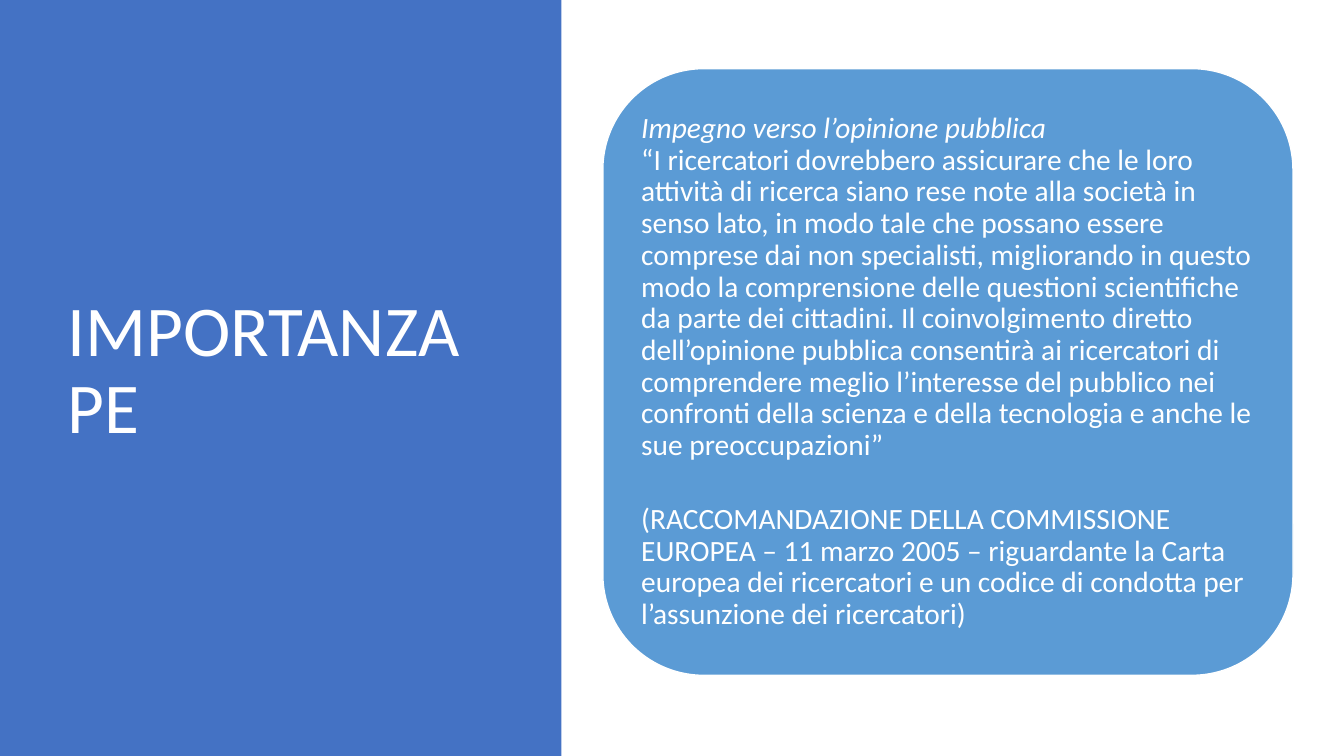
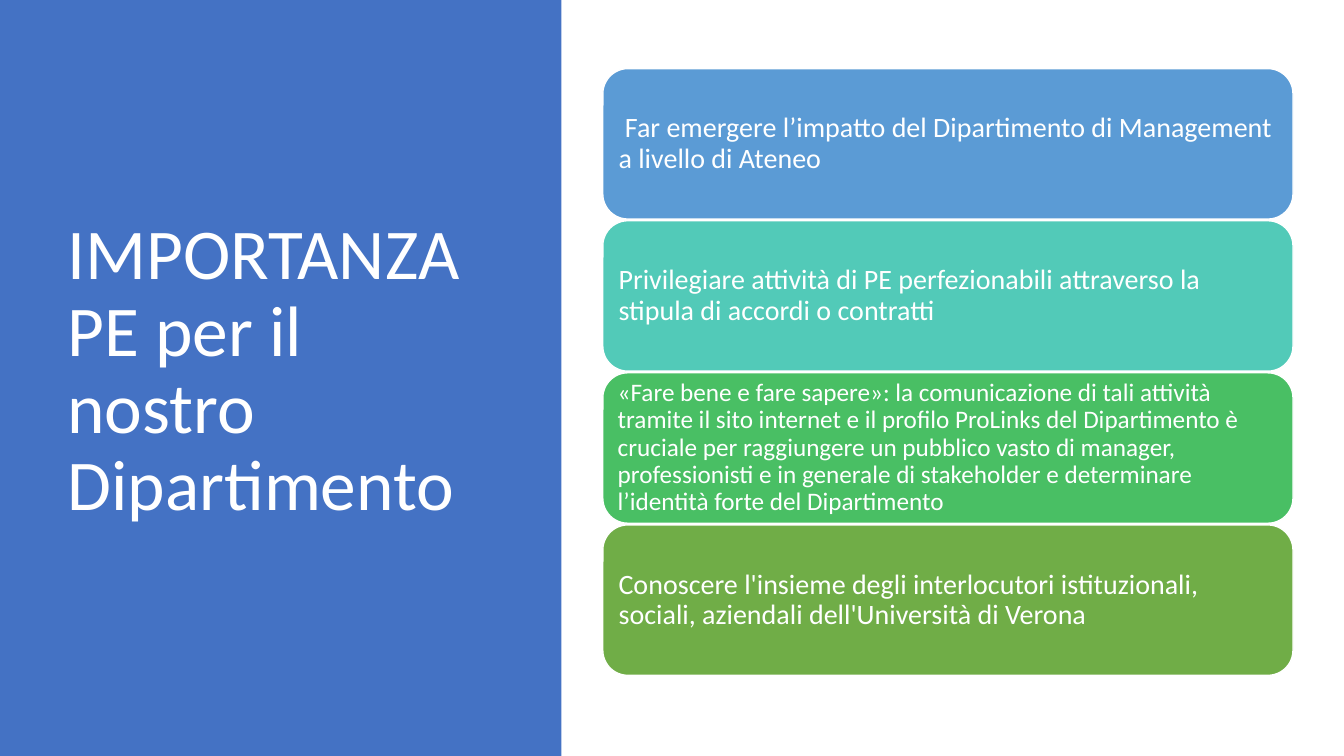
from dataclasses import dataclass

from pptx import Presentation
from pptx.dml.color import RGBColor as Color
from pptx.enum.shapes import MSO_SHAPE as Preset
from pptx.enum.text import MSO_ANCHOR as Anchor, MSO_AUTO_SIZE as AutoSize, PP_ALIGN as Align
from pptx.util import Pt


@dataclass(frozen=True)
class Theme:
    font: str = "Calibri"
    white: str = "FFFFFF"
    panel: str = "4472C4"
    blue: str = "5B9BD5"
    teal: str = "52CAB8"
    green: str = "49BF64"
    olive: str = "70AD47"
    title_size: int = 51
    quote_size: int = 21
    card_size: int = 20
    small_size: int = 18
    line_spacing: float = 0.9
    padding_ratio: float = 0.3


@dataclass(frozen=True)
class Line:
    text: str
    italic: bool = False
    space_before: float = 0


@dataclass(frozen=True)
class Card:
    color: str
    size: int
    lines: tuple


SLIDE_WIDTH, SLIDE_HEIGHT = 960, 540
PANEL_WIDTH = 401
TITLE_LEFT, TITLE_WIDTH = 41, 299.5
CARD_LEFT, CARD_WIDTH, CARD_GAP = 430.6, 493, 1.2
CONTENT_TOP, CONTENT_HEIGHT = 49, 433.4


class Deck:
    def __init__(self, theme):
        self.theme = theme
        self.slide = None
        self.presentation = Presentation()
        self.presentation.slide_width = Pt(SLIDE_WIDTH)
        self.presentation.slide_height = Pt(SLIDE_HEIGHT)

    def new_slide(self, title):
        layout = self.presentation.slide_layouts[5]
        self.slide = self.presentation.slides.add_slide(layout)
        panel = self.box(Preset.RECTANGLE, 0, 0, PANEL_WIDTH, SLIDE_HEIGHT, self.theme.panel)
        panel.line.fill.background()
        self.title(title)

    def title(self, text):
        shape = self.slide.shapes.title
        self.slide.shapes._spTree.append(shape._element)
        shape.left, shape.top = Pt(TITLE_LEFT), Pt(CONTENT_TOP)
        shape.width, shape.height = Pt(TITLE_WIDTH), Pt(CONTENT_HEIGHT)
        self.fill_text(shape.text_frame, [Line(text)], self.theme.title_size)

    def box(self, preset, left, top, width, height, color):
        shape = self.slide.shapes.add_shape(preset, Pt(left), Pt(top), Pt(width), Pt(height))
        shape.shadow.inherit = False
        shape.fill.solid()
        shape.fill.fore_color.rgb = Color.from_string(color)
        return shape

    def fill_text(self, frame, lines, size):
        frame.word_wrap = True
        frame.auto_size = AutoSize.NONE
        frame.vertical_anchor = Anchor.MIDDLE
        for index, line in enumerate(lines):
            paragraph = frame.add_paragraph() if index else frame.paragraphs[0]
            paragraph.alignment = Align.LEFT
            paragraph.line_spacing = self.theme.line_spacing
            paragraph.space_before = Pt(line.space_before)
            run = paragraph.add_run()
            run.text = line.text
            run.font.name = self.theme.font
            run.font.size = Pt(size)
            run.font.italic = line.italic
            run.font.color.rgb = Color.from_string(self.theme.white)

    def card(self, card, top, height):
        shape = self.box(Preset.ROUNDED_RECTANGLE, CARD_LEFT, top, CARD_WIDTH, height, card.color)
        shape.line.color.rgb = Color.from_string(self.theme.white)
        shape.line.width = Pt(1)
        frame = shape.text_frame
        padding = Pt(card.size * self.theme.padding_ratio)
        frame.margin_left = frame.margin_right = padding
        frame.margin_top = frame.margin_bottom = padding
        self.fill_text(frame, card.lines, card.size)

    def card_stack(self, cards):
        height = (CONTENT_HEIGHT - CARD_GAP * (len(cards) - 1)) / len(cards)
        for index, card in enumerate(cards):
            self.card(card, CONTENT_TOP + index * (height + CARD_GAP), height)


def main():
    theme = Theme()
    deck = Deck(theme)

    deck.new_slide("IMPORTANZA PE")
    deck.card_stack([
        Card(theme.blue, theme.quote_size, (
            Line("Impegno verso l’opinione pubblica", italic=True),
            Line("“I ricercatori dovrebbero assicurare che le loro attività di ricerca siano "
                 "rese note alla società in senso lato, in modo tale che possano essere comprese "
                 "dai non specialisti, migliorando in questo modo la comprensione delle questioni "
                 "scientifiche da parte dei cittadini. Il coinvolgimento diretto dell’opinione "
                 "pubblica consentirà ai ricercatori di comprendere meglio l’interesse del "
                 "pubblico nei confronti della scienza e della tecnologia e anche le sue "
                 "preoccupazioni”"),
            Line("(RACCOMANDAZIONE DELLA COMMISSIONE EUROPEA – 11 marzo 2005 – riguardante la "
                 "Carta europea dei ricercatori e un codice di condotta per l’assunzione dei "
                 "ricercatori)", space_before=30),
        )),
    ])

    deck.new_slide("IMPORTANZA PE per il nostro Dipartimento")
    deck.card_stack([
        Card(theme.blue, theme.card_size, (
            Line(" Far emergere l’impatto del Dipartimento di Management a livello di Ateneo"),
        )),
        Card(theme.teal, theme.card_size, (
            Line("Privilegiare attività di PE perfezionabili attraverso la stipula di accordi "
                 "o contratti"),
        )),
        Card(theme.green, theme.small_size, (
            Line("«Fare bene e fare sapere»: la comunicazione di tali attività tramite il sito "
                 "internet e il profilo ProLinks del Dipartimento è cruciale per raggiungere un "
                 "pubblico vasto di manager, professionisti e in generale di stakeholder e "
                 "determinare l’identità forte del Dipartimento"),
        )),
        Card(theme.olive, theme.card_size, (
            Line("Conoscere l'insieme degli interlocutori istituzionali, sociali, aziendali "
                 "dell'Università di Verona"),
        )),
    ])

    deck.presentation.save("out.pptx")


if __name__ == "__main__":
    main()
